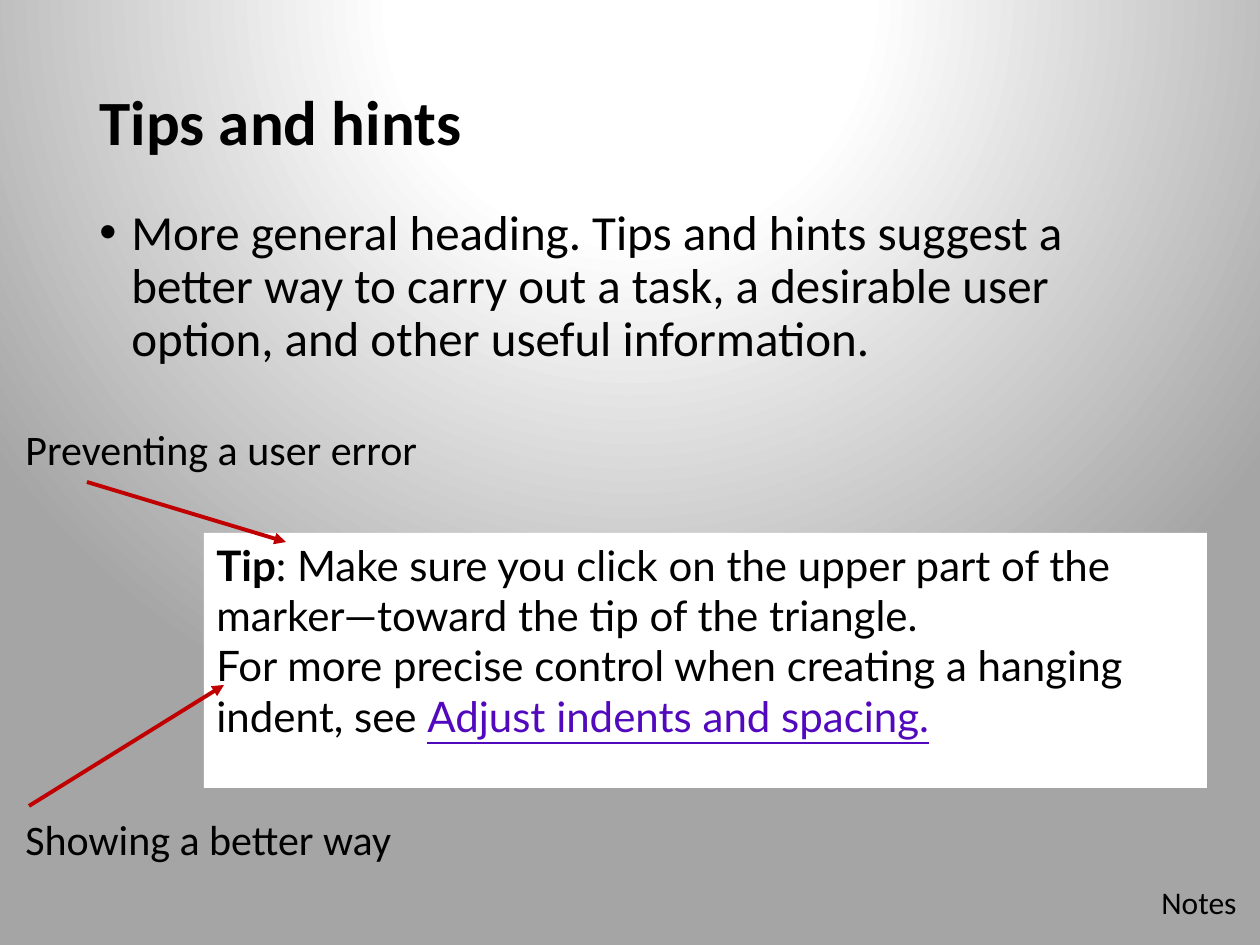
from pptx import Presentation
from pptx.dml.color import RGBColor
from pptx.enum.shapes import MSO_CONNECTOR, MSO_SHAPE
from pptx.enum.text import MSO_ANCHOR, MSO_AUTO_SIZE, PP_ALIGN
from pptx.oxml import parse_xml
from pptx.oxml.ns import nsdecls
from pptx.util import Pt

STRAIGHT = MSO_CONNECTOR.STRAIGHT
RECT = MSO_SHAPE.RECTANGLE
TOP, MIDDLE = MSO_ANCHOR.TOP, MSO_ANCHOR.MIDDLE
LEFT, RIGHT = PP_ALIGN.LEFT, PP_ALIGN.RIGHT
NO_FIT = MSO_AUTO_SIZE.NONE
TITLE_ONLY = 5
EMU_PER_PX = 914400 / 126
BLACK, WHITE, RED, VIOLET = "000000", "FFFFFF", "C00000", "5209BD"
STOPS = [(0, WHITE), (30, WHITE), (100, "A5A5A5")]


def px(n):
    return round(n * EMU_PER_PX)


def rgb(value):
    return RGBColor.from_string(value)


def set_background(s):
    stops = "".join(
        f'<a:gs pos="{pos * 1000}"><a:srgbClr val="{color}"/></a:gs>'
        for pos, color in STOPS)
    s._element.cSld.insert(0, parse_xml(
        f'<p:bg {nsdecls("p", "a")}><p:bgPr><a:gradFill rotWithShape="1">'
        f'<a:gsLst>{stops}</a:gsLst><a:path path="circle">'
        '<a:fillToRect l="50000" t="-80000" r="50000" b="180000"/>'
        '</a:path></a:gradFill><a:effectLst/></p:bgPr></p:bg>'))


def add_run(p, text, size=24, font="Calibri", color=BLACK, bold=False,
            underline=False):
    r = p.add_run()
    r.text = text
    r.font.name, r.font.size = font, Pt(size)
    r.font.bold, r.font.underline = bold, underline
    r.font.color.rgb = rgb(color)


def write(tf, text, align=LEFT, anchor=TOP, spacing=None, **fmt):
    tf.word_wrap = True
    tf.auto_size = NO_FIT
    tf.vertical_anchor = anchor
    p = tf.paragraphs[0]
    p.alignment = align
    p.line_spacing = spacing
    add_run(p, text, **fmt)
    return p


def add_title(s, text, x, y, w, h):
    sp = s.shapes.title
    sp.left, sp.top, sp.width, sp.height = map(px, (x, y, w, h))
    write(sp.text_frame, text, anchor=MIDDLE, spacing=0.9, size=36, bold=True)


def add_text(s, text, x, y, w, h, **fmt):
    sp = s.shapes.add_textbox(*map(px, (x, y, w, h)))
    return write(sp.text_frame, text, **fmt)


def add_bullet(p, indent):
    pPr = p._p.get_or_add_pPr()
    pPr.set("marL", str(px(indent)))
    pPr.set("indent", str(-px(indent)))
    pPr.append(parse_xml(f'<a:buFont {nsdecls("a")} typeface="Arial"/>'))
    pPr.append(parse_xml(f'<a:buChar {nsdecls("a")} char="•"/>'))


def add_panel(s, paragraphs, x, y, w, h):
    sp = s.shapes.add_shape(RECT, *map(px, (x, y, w, h)))
    sp.shadow.inherit = False
    sp.fill.solid()
    sp.fill.fore_color.rgb = rgb(WHITE)
    sp.line.fill.background()
    tf = sp.text_frame
    tf.word_wrap = True
    tf.vertical_anchor = TOP
    for i, runs in enumerate(paragraphs):
        p = tf.add_paragraph() if i else tf.paragraphs[0]
        p.alignment = LEFT
        for text, fmt in runs:
            add_run(p, text, font="Lato", **fmt)


def add_arrow(s, x1, y1, x2, y2):
    c = s.shapes.add_connector(STRAIGHT, *map(px, (x1, y1, x2, y2)))
    c.line.color.rgb = rgb(RED)
    c.line.width = Pt(2.25)
    c.line._get_or_add_ln().append(
        parse_xml(f'<a:tailEnd {nsdecls("a")} type="triangle"/>'))
    c._element.spPr.append(parse_xml(f'<a:effectLst {nsdecls("a")}/>'))


def main():
    prs = Presentation()
    prs.slide_width, prs.slide_height = px(1260), px(945)
    s = prs.slides.add_slide(prs.slide_layouts[TITLE_ONLY])
    set_background(s)
    add_title(s, "Tips and hints", 87, 50, 1086, 151)
    p = add_text(s, "More general heading. Tips and hints suggest a better way "
                 "to carry out a task, a desirable user option, and other "
                 "useful information.", 87, 202, 1086, 724,
                 size=28, spacing=0.9)
    p.space_before = Pt(10)
    add_bullet(p, 32)
    add_text(s, "Preventing a user error", 13, 417, 524, 63)
    add_panel(s, [
        [("Tip", {"bold": True}),
         (": Make sure you click on the upper part of the marker—toward "
          "the tip of the triangle.", {})],
        [("For more precise control when creating a hanging indent, see ", {}),
         ("Adjust indents and spacing.",
          {"color": VIOLET, "underline": True})],
    ], 204, 533, 1003, 255)
    add_text(s, "Showing a better way", 13, 807, 467, 63)
    add_arrow(s, 29, 806, 224, 685)
    add_arrow(s, 87, 482, 286, 542)
    add_text(s, "Notes", 916, 877, 333, 50, size=18, align=RIGHT)
    prs.save("out.pptx")


if __name__ == "__main__":
    main()
